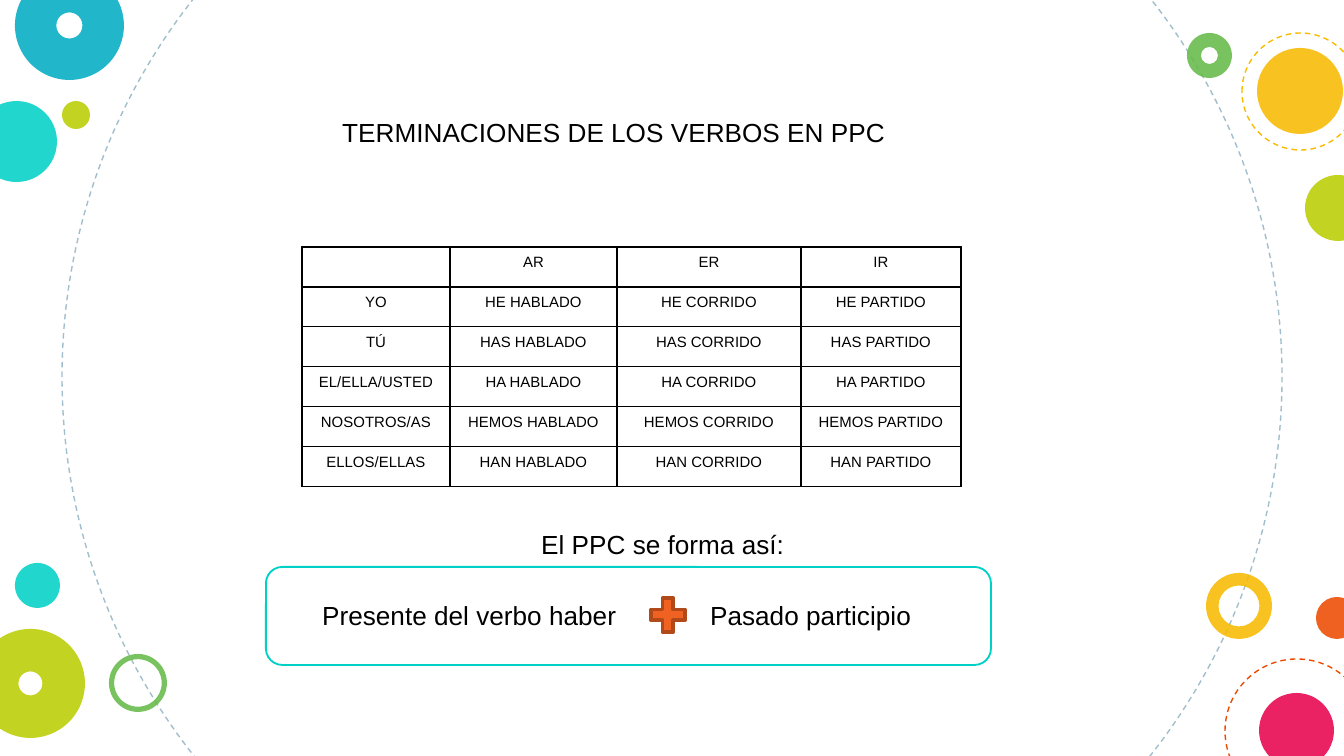
"""Build a Spanish grammar slide on the endings of verbs in the present perfect."""
import pptx
import pptx.dml.color
import pptx.enum.dml
import pptx.enum.shapes
import pptx.enum.text
import pptx.oxml
import pptx.oxml.ns
import pptx.util

PX = 914400 / 134.4
RGB = pptx.dml.color.RGBColor
SHAPE = pptx.enum.shapes.MSO_SHAPE
BLACK = RGB(0x00, 0x00, 0x00)
WHITE = RGB(0xFF, 0xFF, 0xFF)
MIST = RGB(0xA1, 0xBE, 0xCC)
TURQUOISE = RGB(0x00, 0xD1, 0xC6)
YELLOW = RGB(0xF8, 0xBB, 0x00)
BLUE = RGB(0x00, 0xAC, 0xC3)
LIME = RGB(0xBB, 0xCD, 0x00)
ORANGE = RGB(0xED, 0x4A, 0x00)
GREEN = RGB(0x65, 0xBB, 0x48)
PINK = RGB(0xE8, 0x00, 0x4C)
PLUS_FILL = RGB(0xEF, 0x62, 0x22)
PLUS_EDGE = RGB(0xB1, 0x49, 0x19)


def px(*lengths):
    return [pptx.util.Emu(round(length * PX)) for length in lengths]


def add_figure(kind, box, fill=None, edge=None, weight=0.75):
    figure = slide.shapes.add_shape(kind, *px(*box))
    figure.shadow.inherit = False
    if fill is None:
        figure.fill.background()
    else:
        figure.fill.solid()
        figure.fill.fore_color.rgb = fill
    if edge is None:
        figure.line.fill.background()
    else:
        figure.line.color.rgb = edge
        figure.line.width = pptx.util.Pt(weight)
    return figure


deck = pptx.Presentation()
deck.slide_width, deck.slide_height = px(1344, 756)
slide = deck.slides.add_slide(deck.slide_layouts[6])

for left, top, size, color in [
    (62, -233, 1220, MIST),
    (1225, 659, 144, ORANGE),
    (1242, 33, 117, YELLOW),
]:
    orbit = add_figure(SHAPE.OVAL, (left, top, size, size), edge=color)
    orbit.line.dash_style = pptx.enum.dml.MSO_LINE.DASH

for left, top, size, color, ring in [
    (-24, 101, 81, TURQUOISE, None),
    (1206, 573, 66, YELLOW, 0.19),
    (15, -29, 109, BLUE, 0.38),
    (62, 101, 28, LIME, None),
    (109, 654, 58, GREEN, 0.09),
    (1316, 597, 42, ORANGE, None),
    (-24, 629, 109, LIME, 0.39),
    (1259, 693, 75, PINK, None),
    (1187, 33, 45, GREEN, 0.31),
    (1257, 48, 86, YELLOW, None),
    (1305, 175, 66, LIME, None),
    (15, 563, 45, TURQUOISE, None),
]:
    kind = SHAPE.OVAL if ring is None else SHAPE.DONUT
    bubble = add_figure(kind, (left, top, size, size), fill=color)
    if ring is not None:
        bubble.adjustments[0] = ring
    tint = bubble.fill._xPr.find(".//" + pptx.oxml.ns.qn("a:srgbClr"))
    tint.append(pptx.oxml.parse_xml(
        f'<a:alpha {pptx.oxml.ns.nsdecls("a")} val="87000"/>'))

add_figure(SHAPE.ROUNDED_RECTANGLE, (266, 567, 725, 98), WHITE, TURQUOISE, 1)

conjugations = [
    ("", "AR", "ER", "IR"),
    ("YO", "HE HABLADO", "HE CORRIDO", "HE PARTIDO"),
    ("TÚ", "HAS HABLADO", "HAS CORRIDO", "HAS PARTIDO"),
    ("EL/ELLA/USTED", "HA HABLADO", "HA CORRIDO", "HA PARTIDO"),
    ("NOSOTROS/AS", "HEMOS HABLADO", "HEMOS CORRIDO", "HEMOS PARTIDO"),
    ("ELLOS/ELLAS", "HAN HABLADO", "HAN CORRIDO", "HAN PARTIDO"),
]
column_widths = (148, 167, 184, 160)
verbs = slide.shapes.add_table(
    len(conjugations), len(column_widths),
    *px(302, 247, sum(column_widths), 40 * len(conjugations))).table
verbs.first_row = verbs.horz_banding = False
for column, width in zip(verbs.columns, px(*column_widths)):
    column.width = width
for row, forms in zip(verbs.rows, conjugations):
    row.height = px(40)[0]
    for cell, form in zip(row.cells, forms):
        cell.text_frame.text = form
        paragraph = cell.text_frame.paragraphs[0]
        paragraph.alignment = pptx.enum.text.PP_ALIGN.CENTER
        paragraph._p.get_or_add_endParaRPr().set("sz", "800")
        for run in paragraph.runs:
            run.font.name = "Arial"
            run.font.size = pptx.util.Pt(8)
            run.font.color.rgb = BLACK
        borders = cell._tc.get_or_add_tcPr()
        for side in ("lnL", "lnR", "lnT", "lnB"):
            borders.append(pptx.oxml.parse_xml(
                f'<a:{side} {pptx.oxml.ns.nsdecls("a")} w="9525"><a:solidFill>'
                f'<a:srgbClr val="{BLACK}"/></a:solidFill></a:{side}>'))
        cell.fill.background()

for left, top, width, wording in [
    (329, 110, 640, "TERMINACIONES DE LOS VERBOS EN PPC"),
    (528, 522, 272, "El PPC se forma así:"),
    (309, 593, 336, "Presente del verbo haber"),
    (697, 593, 280, "Pasado participio"),
]:
    label = slide.shapes.add_textbox(*px(left, top, width, 46)).text_frame
    label.word_wrap = True
    label.text = wording
    font = label.paragraphs[0].runs[0].font
    font.name = "Arial"
    font.size = pptx.util.Pt(14)
    font.color.rgb = BLACK

add_figure(SHAPE.MATH_PLUS, (645, 592, 46, 46), PLUS_FILL, PLUS_EDGE, 2)

deck.save("out.pptx")
